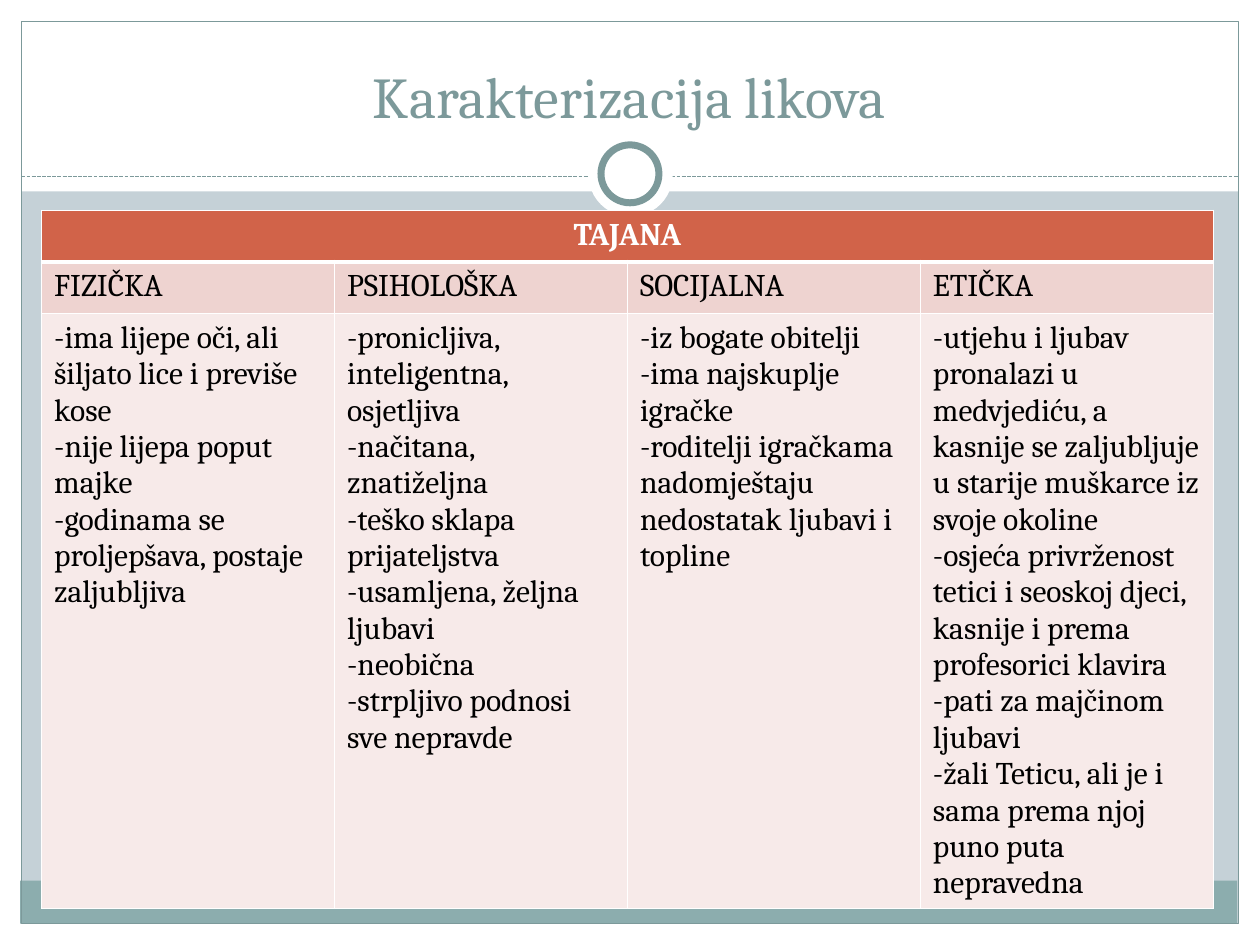
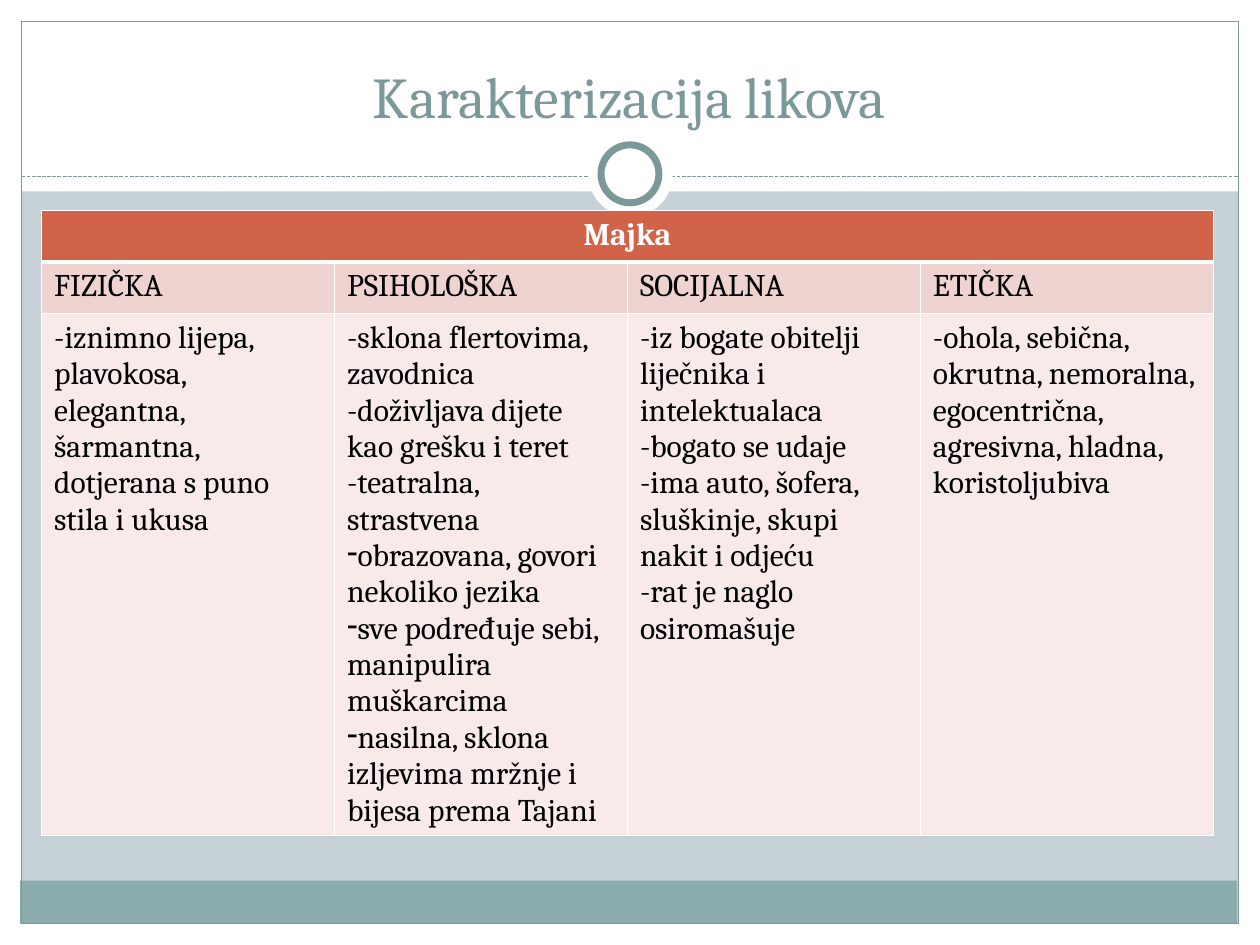
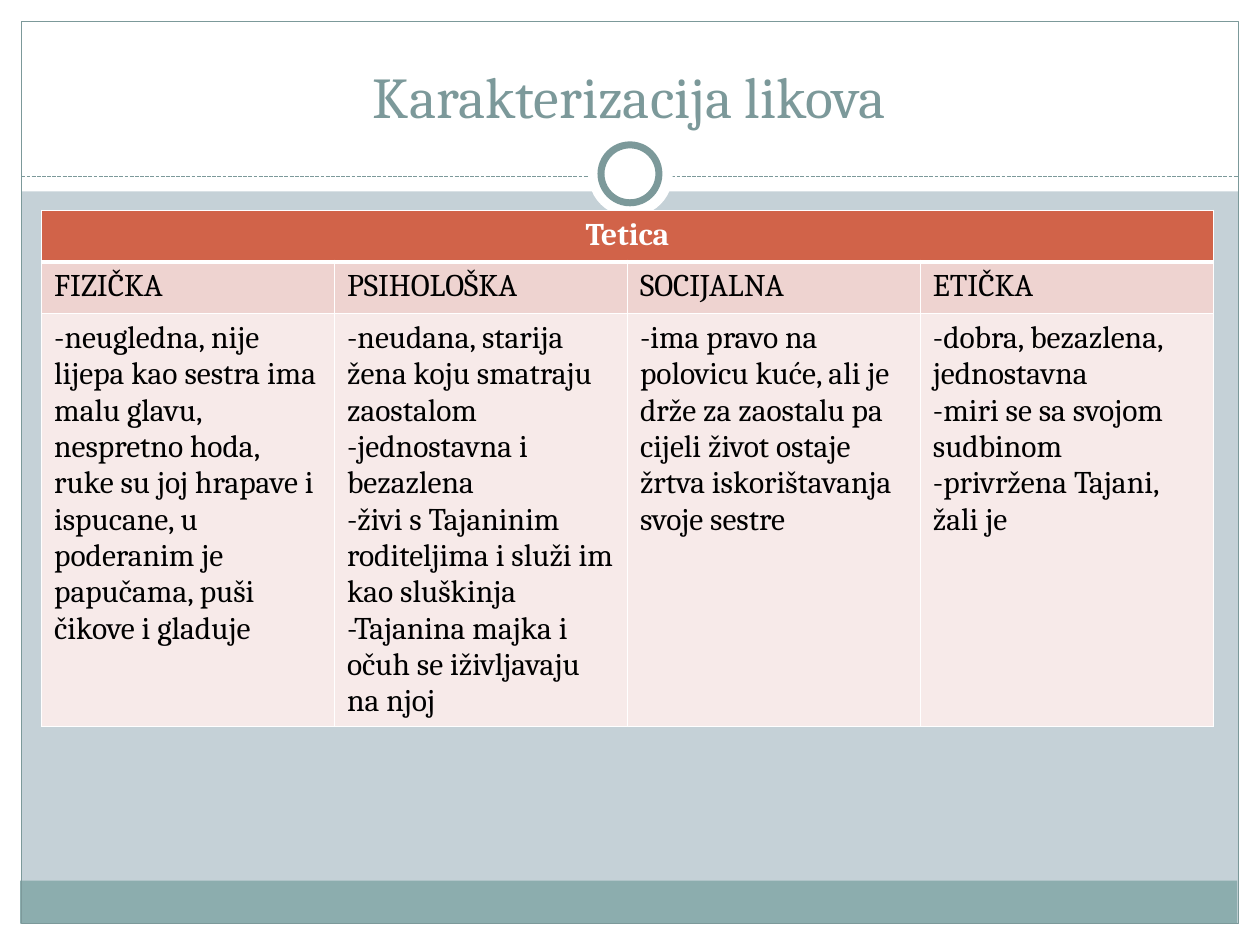
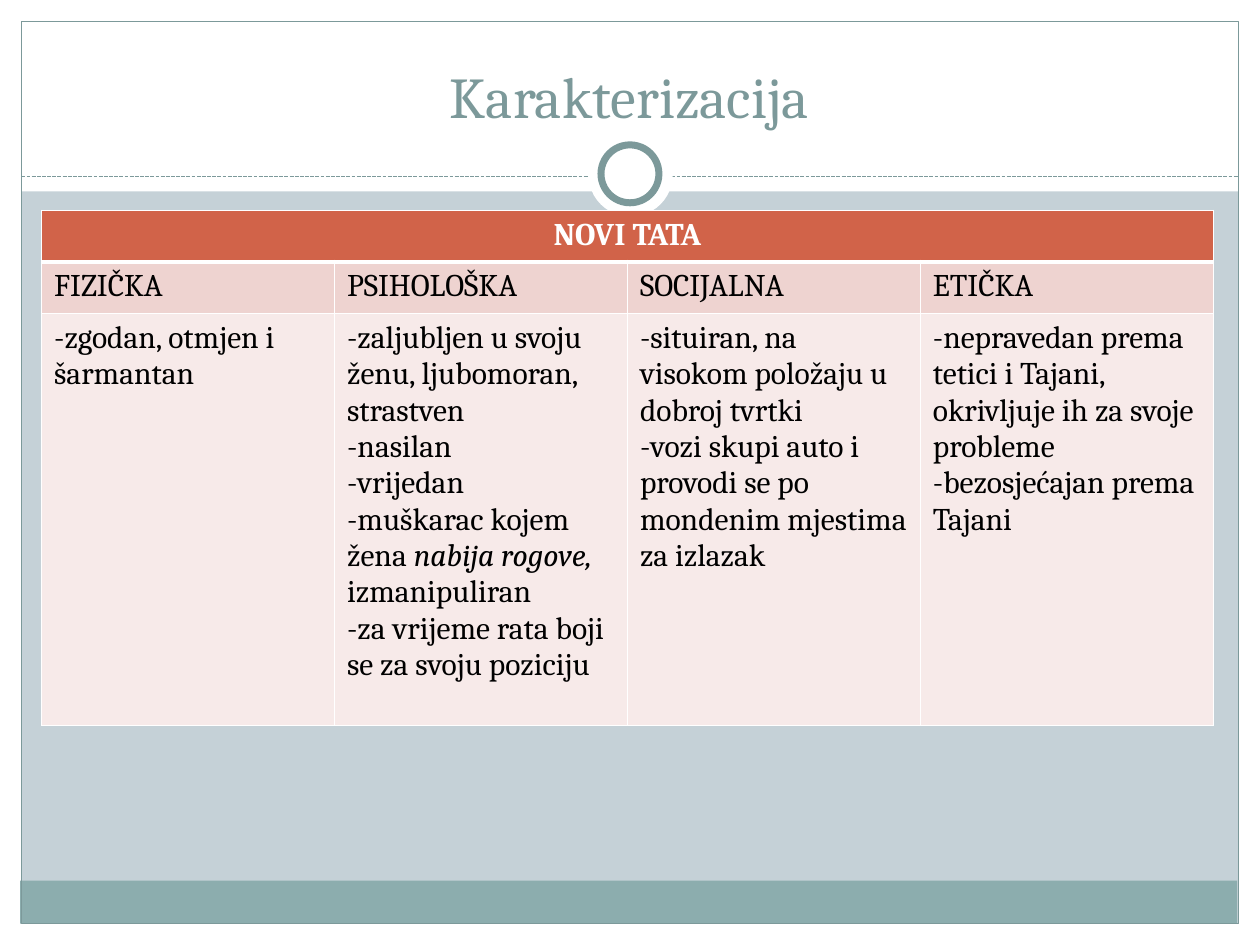
from dataclasses import dataclass
from typing import Optional, Union

import lxml.etree
import pptx
import pptx.dml.color
import pptx.enum.dml
import pptx.enum.shapes
import pptx.enum.text
import pptx.oxml.ns
import pptx.util

Inches = pptx.util.Inches
Pt = pptx.util.Pt
RGBColor = pptx.dml.color.RGBColor
ShapeType = pptx.enum.shapes.MSO_SHAPE
qn = pptx.oxml.ns.qn

# Shared style
FONT = "Cambria"
WHITE = RGBColor(0xFF, 0xFF, 0xFF)
BLACK = RGBColor(0x00, 0x00, 0x00)
BACKGROUND = RGBColor(0xC5, 0xD1, 0xD7)
FOOTER_TEAL = RGBColor(0x8C, 0xAD, 0xAE)
TITLE_TEAL = RGBColor(0x7C, 0x99, 0x9A)
HEADER_ORANGE = RGBColor(0xD1, 0x63, 0x49)
ASPECT_PINK = RGBColor(0xEE, 0xD3, 0xD0)
BODY_PINK = RGBColor(0xF7, 0xEA, 0xE9)

TITLE_ONLY_LAYOUT = 5
TABLE_WIDTH = 9.3
HEADING_HEIGHT = 0.41
ASPECTS = ("FIZIČKA", "PSIHOLOŠKA", "SOCIJALNA", "ETIČKA")


@dataclass(frozen=True)
class FramePart:
    kind: ShapeType
    left: float
    top: float
    width: float
    height: float
    fill: Optional[RGBColor] = None
    line_width: float = 0


@dataclass(frozen=True)
class Trait:
    text: str
    bulleted: bool = False
    italic: str = ""


Entry = Union[str, Trait]


@dataclass(frozen=True)
class Character:
    title: str
    name: str
    body_height: float
    traits: tuple[tuple[Entry, ...], ...]


BANDS = (
    FramePart(ShapeType.RECTANGLE, 0, 7.33, 10, 0.17, WHITE),
    FramePart(ShapeType.RECTANGLE, 0, 0, 10, 1.52, WHITE),
    FramePart(ShapeType.RECTANGLE, 0, 0, 0.17, 7.5, WHITE),
    FramePart(ShapeType.RECTANGLE, 9.83, 0, 0.17, 7.5, WHITE),
    FramePart(ShapeType.RECTANGLE, 0.16, 6.99, 9.66, 0.34, FOOTER_TEAL),
    FramePart(ShapeType.RECTANGLE, 0.17, 0.17, 9.66, 7.16, line_width=0.75),
)
RINGS = (
    FramePart(ShapeType.OVAL, 4.67, 1.05, 0.67, 0.67, WHITE),
    FramePart(ShapeType.OVAL, 4.77, 1.15, 0.46, 0.46, WHITE, 4),
)

CHARACTERS = (
    Character("Karakterizacija likova", "TAJANA", 4.72, (
        ("-ima lijepe oči, ali šiljato lice i previše kose",
         "-nije lijepa poput majke",
         "-godinama se proljepšava, postaje zaljubljiva"),
        ("-pronicljiva, inteligentna, osjetljiva",
         "-načitana, znatiželjna",
         "-teško sklapa prijateljstva",
         "-usamljena, željna ljubavi",
         "-neobična",
         "-strpljivo podnosi sve nepravde"),
        ("-iz bogate obitelji",
         "-ima najskuplje igračke",
         "-roditelji igračkama nadomještaju nedostatak ljubavi i topline"),
        ("-utjehu i ljubav pronalazi u medvjediću, a kasnije se zaljubljuje "
         "u starije muškarce iz svoje okoline",
         "-osjeća privrženost tetici i seoskoj djeci, kasnije i prema "
         "profesorici klavira",
         "-pati za majčinom ljubavi",
         "-žali Teticu, ali je i sama prema njoj puno puta nepravedna"),
    )),
    Character("Karakterizacija likova", "Majka", 4.14, (
        ("-iznimno lijepa, plavokosa, elegantna, šarmantna, dotjerana s puno "
         "stila i ukusa",),
        ("-sklona flertovima, zavodnica",
         "-doživljava dijete kao grešku i teret",
         "-teatralna, strastvena",
         Trait("obrazovana, govori nekoliko jezika", bulleted=True),
         Trait("sve podređuje sebi, manipulira muškarcima", bulleted=True),
         Trait("nasilna, sklona izljevima mržnje i bijesa prema Tajani",
               bulleted=True)),
        ("-iz bogate obitelji liječnika i intelektualaca",
         "-bogato se udaje",
         "-ima auto, šofera, sluškinje, skupi nakit i odjeću",
         "-rat je naglo osiromašuje"),
        ("-ohola, sebična, okrutna, nemoralna, egocentrična, agresivna, "
         "hladna, koristoljubiva",),
    )),
    Character("Karakterizacija likova", "Tetica", 3.27, (
        ("-neugledna, nije lijepa kao sestra ima malu glavu, nespretno hoda, "
         "ruke su joj hrapave i ispucane, u poderanim je papučama, puši "
         "čikove i gladuje",),
        ("-neudana, starija žena koju smatraju zaostalom",
         "-jednostavna i bezazlena",
         "-živi s Tajaninim roditeljima i služi im kao sluškinja",
         "-Tajanina majka i očuh se iživljavaju na njoj"),
        ("-ima pravo na polovicu kuće, ali je drže za zaostalu pa cijeli "
         "život ostaje žrtva iskorištavanja svoje sestre",),
        ("-dobra, bezazlena, jednostavna",
         "-miri se sa svojom sudbinom",
         "-privržena Tajani, žali je"),
    )),
    Character("Karakterizacija", "NOVI TATA", 3.27, (
        ("-zgodan, otmjen i šarmantan",),
        ("-zaljubljen u svoju ženu, ljubomoran, strastven",
         "-nasilan",
         "-vrijedan",
         Trait("-muškarac kojem žena nabija rogove, izmanipuliran",
               italic="nabija rogove, "),
         "-za vrijeme rata boji se za svoju poziciju"),
        ("-situiran, na visokom položaju u dobroj tvrtki",
         "-vozi skupi auto i provodi se po mondenim mjestima za izlazak"),
        ("-nepravedan prema tetici i Tajani, okrivljuje ih za svoje probleme",
         "-bezosjećajan prema Tajani"),
    )),
)


# Frame shared through the layout
def add_part(slide: pptx.slide.Slide, part: FramePart):
    shape = slide.shapes.add_shape(
        part.kind, Inches(part.left), Inches(part.top),
        Inches(part.width), Inches(part.height))
    shape.shadow.inherit = False
    if part.fill is None:
        shape.fill.background()
    else:
        shape.fill.solid()
        shape.fill.fore_color.rgb = part.fill
    if part.line_width:
        shape.line.color.rgb = TITLE_TEAL
        shape.line.width = Pt(part.line_width)
    else:
        shape.line.fill.background()
    return shape


def add_divider(slide: pptx.slide.Slide):
    divider = slide.shapes.add_connector(
        pptx.enum.shapes.MSO_CONNECTOR.STRAIGHT,
        Inches(0.17), Inches(1.4), Inches(9.83), Inches(1.4))
    divider.line.color.rgb = TITLE_TEAL
    divider.line.width = Pt(0.75)
    divider.line.dash_style = pptx.enum.dml.MSO_LINE.SQUARE_DOT
    lxml.etree.SubElement(divider.element.spPr, qn("a:effectLst"))
    return divider


def move_frame_to_layout(slide: pptx.slide.Slide) -> None:
    """Draw the frame once and hand it to the layout, behind its title."""
    layout = slide.slide_layout
    layout.background.fill.solid()
    layout.background.fill.fore_color.rgb = BACKGROUND
    title, *footers = list(layout.placeholders)
    for footer in footers:
        footer.element.getparent().remove(footer.element)
    frame = [add_part(slide, band) for band in BANDS]
    frame.append(add_divider(slide))
    frame.extend(add_part(slide, ring) for ring in RINGS)
    for shape in frame:
        title.element.addprevious(shape.element)


# Text and cells
def format_font(font: pptx.text.text.Font, size: float, color: RGBColor,
                bold: bool = False) -> None:
    font.name = FONT
    font.size = Pt(size)
    font.bold = bold
    font.color.rgb = color


def set_title(slide: pptx.slide.Slide, text: str) -> None:
    title = slide.shapes.title
    title.left, title.top = Inches(0.33), Inches(0.25)
    title.width, title.height = Inches(9.33), Inches(0.83)
    text_frame = title.text_frame
    text_frame.text = text
    text_frame.word_wrap = True
    text_frame.auto_size = pptx.enum.text.MSO_AUTO_SIZE.NONE
    text_frame.vertical_anchor = pptx.enum.text.MSO_ANCHOR.BOTTOM
    paragraph = text_frame.paragraphs[0]
    paragraph.alignment = pptx.enum.text.PP_ALIGN.CENTER
    format_font(paragraph.runs[0].font, 33, TITLE_TEAL)


def style_cell(cell: pptx.table._Cell, fill: RGBColor, top: float = 1,
               bottom: float = 1) -> None:
    properties = cell._tc.get_or_add_tcPr()
    for side, width in (("L", 1), ("R", 1), ("T", top), ("B", bottom)):
        border = lxml.etree.SubElement(
            properties, qn(f"a:ln{side}"), w=str(Pt(width)))
        solid = lxml.etree.SubElement(border, qn("a:solidFill"))
        lxml.etree.SubElement(solid, qn("a:srgbClr"), val=str(WHITE))
    cell.fill.solid()
    cell.fill.fore_color.rgb = fill


def write_trait(paragraph: pptx.text.text._Paragraph, entry: Entry) -> None:
    trait = Trait(entry) if isinstance(entry, str) else entry
    if trait.italic:
        for part in trait.text.partition(trait.italic):
            run = paragraph.add_run()
            run.text = part
            run.font.italic = part == trait.italic
    else:
        paragraph.text = trait.text
    for run in paragraph.runs:
        format_font(run.font, 18, BLACK)
    if trait.bulleted:
        properties = paragraph._p.get_or_add_pPr()
        properties.set("marL", "0")
        properties.set("indent", "0")
        lxml.etree.SubElement(properties, qn("a:buFontTx"))
        lxml.etree.SubElement(properties, qn("a:buChar"), char="-")


def write_traits(cell: pptx.table._Cell, entries: tuple[Entry, ...]) -> None:
    text_frame = cell.text_frame
    for index, entry in enumerate(entries):
        paragraph = (text_frame.add_paragraph() if index
                     else text_frame.paragraphs[0])
        write_trait(paragraph, entry)


# Character table
def add_character_table(slide: pptx.slide.Slide, character: Character) -> None:
    heights = (HEADING_HEIGHT, HEADING_HEIGHT, character.body_height)
    table = slide.shapes.add_table(
        len(heights), len(ASPECTS), Inches(0.33), Inches(1.67),
        Inches(TABLE_WIDTH), Inches(sum(heights))).table
    table.horz_banding = False
    for row, height in zip(table.rows, heights):
        row.height = Inches(height)

    for column, (aspect, entries) in enumerate(zip(ASPECTS, character.traits)):
        table.columns[column].width = Inches(TABLE_WIDTH / len(ASPECTS))
        style_cell(table.cell(0, column), HEADER_ORANGE, bottom=3)
        style_cell(table.cell(1, column), ASPECT_PINK, top=3)
        style_cell(table.cell(2, column), BODY_PINK)
        write_traits(table.cell(1, column), (aspect,))
        write_traits(table.cell(2, column), entries)

    name_cell = table.cell(0, 0)
    name_cell.merge(table.cell(0, len(ASPECTS) - 1))
    name_cell.text_frame.text = character.name
    paragraph = name_cell.text_frame.paragraphs[0]
    paragraph.alignment = pptx.enum.text.PP_ALIGN.CENTER
    format_font(paragraph.runs[0].font, 18, WHITE, bold=True)


def main() -> None:
    presentation = pptx.Presentation()
    presentation.slide_width = Inches(10)
    presentation.slide_height = Inches(7.5)
    layout = presentation.slide_layouts[TITLE_ONLY_LAYOUT]
    for index, character in enumerate(CHARACTERS):
        slide = presentation.slides.add_slide(layout)
        if index == 0:
            move_frame_to_layout(slide)
        set_title(slide, character.title)
        add_character_table(slide, character)
    presentation.save("out.pptx")


if __name__ == "__main__":
    main()
